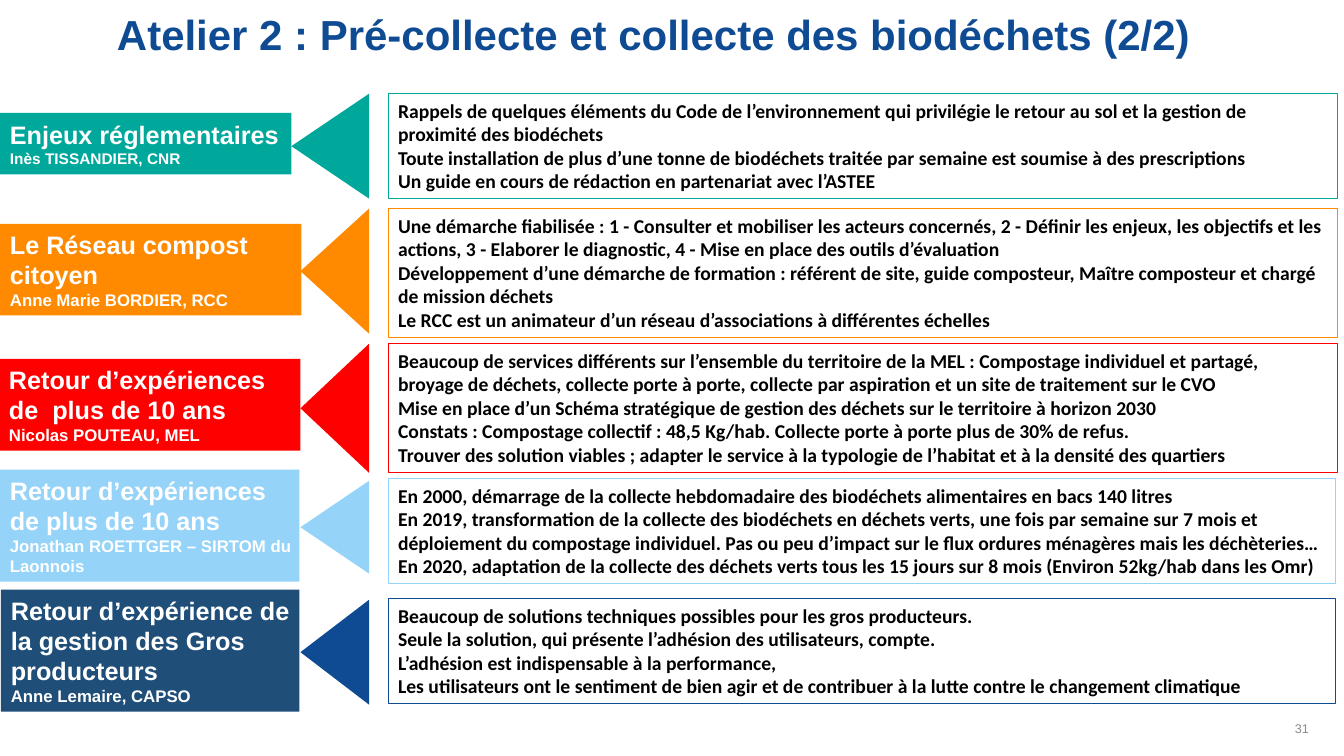
from pptx import Presentation
from pptx.dml.color import RGBColor
from pptx.enum import shapes, text
from pptx.util import Inches, Pt

COLORS = {
    "teal": "00A89C", "orange": "FF8A00", "red": "FF0000", "sky": "95D3F9",
    "navy": "0F4B93", "steel": "1F4E79", "white": "FFFFFF", "black": "000000",
    "gray": "8C8C8C",
}
TITLE = "Atelier 2 : Pré-collecte et collecte des biodéchets (2/2)"
PAGE_NUMBER = "31"

SESSIONS = [
    dict(
        topic="Enjeux réglementaires", speaker="Inès TISSANDIER, CNR", speaker_size=11,
        label=(0, 1.12, 2.89, 0.61), label_color="teal", color="teal",
        arrow=(2.89, 0.93, 1.04), body=(0.93, 9.42, 1.04),
        points=[
            "Rappels de quelques éléments du Code de l’environnement qui privilégie le retour au sol et la gestion de proximité des biodéchets",
            "Toute installation de plus d’une tonne de biodéchets traitée par semaine est soumise à des prescriptions",
            "Un guide en cours de rédaction en partenariat avec l’ASTEE",
        ],
    ),
    dict(
        topic="Le Réseau compost citoyen", speaker="Anne Marie BORDIER, RCC", speaker_size=12,
        label=(0, 2.22, 2.99, 0.91), label_color="orange", color="orange",
        arrow=(2.98, 2.07, 1.24), body=(2.07, 9.42, 1.28),
        points=[
            "Une démarche fiabilisée : 1 - Consulter et mobiliser les acteurs concernés, 2 - Définir les enjeux, les objectifs et les actions, 3 - Elaborer le diagnostic, 4 - Mise en place des outils d’évaluation",
            "Développement d’une démarche de formation : référent de site, guide composteur, Maître composteur et chargé de mission déchets",
            "Le RCC est un animateur d’un réseau d’associations à différentes échelles",
        ],
    ),
    dict(
        topic="Retour d’expériences de  plus de 10 ans", speaker="Nicolas POUTEAU, MEL", speaker_size=12,
        label=(-0.01, 3.56, 2.99, 0.91), label_color="red", color="red",
        arrow=(2.98, 3.41, 1.28), body=(3.41, 9.42, 1.28),
        points=[
            "Beaucoup de services différents sur l’ensemble du territoire de la MEL : Compostage individuel et partagé, broyage de déchets, collecte porte à porte, collecte par aspiration et un site de traitement sur le CVO",
            "Mise en place d’un Schéma stratégique de gestion des déchets sur le territoire à horizon 2030",
            "Constats : Compostage collectif : 48,5 Kg/hab. Collecte porte à porte plus de 30% de refus.",
            "Trouver des solution viables ; adapter le service à la typologie de l’habitat et à la densité des quartiers",
        ],
    ),
    dict(
        topic="Retour d’expériences de plus de 10 ans", speaker="Jonathan ROETTGER – SIRTOM du Laonnois", speaker_size=12,
        label=(0, 4.66, 2.97, 1.11), label_color="sky", color="sky",
        arrow=(2.98, 4.77, 0.92), body=(4.75, 9.4, 1.04),
        points=[
            "En 2000, démarrage de la collecte hebdomadaire des biodéchets alimentaires en bacs 140 litres",
            "En 2019, transformation de la collecte des biodéchets en déchets verts, une fois par semaine sur 7 mois et déploiement du compostage individuel. Pas ou peu d’impact sur le flux ordures ménagères mais les déchèteries…",
            "En 2020, adaptation de la collecte des déchets verts tous les 15 jours sur 8 mois (Environ 52kg/hab dans les Omr)",
        ],
    ),
    dict(
        topic="Retour d’expérience de la gestion des Gros producteurs", speaker="Anne Lemaire, CAPSO", speaker_size=12,
        label=(0.01, 5.85, 2.96, 1.21), label_color="steel", color="navy",
        arrow=(2.98, 5.95, 1.04), body=(5.94, 9.4, 1.04),
        points=[
            "Beaucoup de solutions techniques possibles pour les gros producteurs.",
            "Seule la solution, qui présente l’adhésion des utilisateurs, compte.",
            "L’adhésion est indispensable à la performance,",
            "Les utilisateurs ont le sentiment de bien agir et de contribuer à la lutte contre le changement climatique",
        ],
    ),
]
BODY_LEFT = 3.85
ARROW_RIGHT = 3.66


def color(name):
    return RGBColor.from_string(COLORS[name])


def write(box, lines, sizes, font="Arial", ink="white", bold=True,
          align=text.PP_ALIGN.LEFT, anchor=text.MSO_ANCHOR.MIDDLE,
          fit=text.MSO_AUTO_SIZE.NONE, spacing=1.0, right=0.1):
    frame = box.text_frame
    frame.word_wrap = True
    frame.auto_size = fit
    frame.vertical_anchor = anchor
    frame.margin_left, frame.margin_right = Inches(0.1), Inches(right)
    frame.margin_top = frame.margin_bottom = Inches(0.05)
    for index, (line, size) in enumerate(zip(lines, sizes)):
        para = frame.add_paragraph() if index else frame.paragraphs[0]
        para.alignment = align
        para.line_spacing = spacing
        para.space_before = para.space_after = Pt(0)
        span = para.add_run()
        span.text = line
        span.font.name = font
        span.font.size = Pt(size)
        span.font.bold = bold
        span.font.color.rgb = color(ink)


def add_block(page, kind, place, fill=None, line=None):
    block = page.shapes.add_shape(kind, *map(Inches, place))
    block.shadow.inherit = False
    if fill:
        block.fill.solid()
        block.fill.fore_color.rgb = color(fill)
    else:
        block.fill.background()
    if line:
        block.line.color.rgb = color(line)
        block.line.width = Pt(0.75)
    else:
        block.line.fill.background()
    return block


def add_session(page, session):
    rectangle = shapes.MSO_SHAPE.RECTANGLE
    label = add_block(page, rectangle, session["label"], fill=session["label_color"])
    write(label, [session["topic"], session["speaker"]], [18, session["speaker_size"]],
          right=0.05)

    tip, top, span = session["arrow"]
    depth = ARROW_RIGHT - tip
    center_x, center_y = tip + depth / 2, top + span / 2
    arrow = add_block(page, shapes.MSO_SHAPE.ISOSCELES_TRIANGLE,
                      (center_x - span / 2, center_y - depth / 2, span, depth),
                      fill=session["color"])
    arrow.rotation = 270

    top, width, height = session["body"]
    body = add_block(page, rectangle, (BODY_LEFT, top, width, height), line=session["color"])
    points = session["points"]
    write(body, points, [14] * len(points), font="Calibri", ink="black",
          fit=text.MSO_AUTO_SIZE.SHAPE_TO_FIT_TEXT, anchor=text.MSO_ANCHOR.TOP)


def main():
    deck = Presentation()
    deck.slide_width, deck.slide_height = Inches(13.33), Inches(7.5)
    page = deck.slides.add_slide(deck.slide_layouts[5])

    title = page.shapes.title
    title.left, title.top, title.width, title.height = map(Inches, (1.06, 0.09, 11.5, 0.62))
    write(title, [TITLE], [30], ink="navy", spacing=0.9, anchor=text.MSO_ANCHOR.TOP)

    for session in SESSIONS:
        add_session(page, session)

    number = page.shapes.add_textbox(*map(Inches, (10.08, 7.1, 3, 0.25)))
    write(number, [PAGE_NUMBER], [9], ink="gray", bold=False,
          align=text.PP_ALIGN.RIGHT, anchor=text.MSO_ANCHOR.BOTTOM)

    deck.save("out.pptx")


if __name__ == "__main__":
    main()
